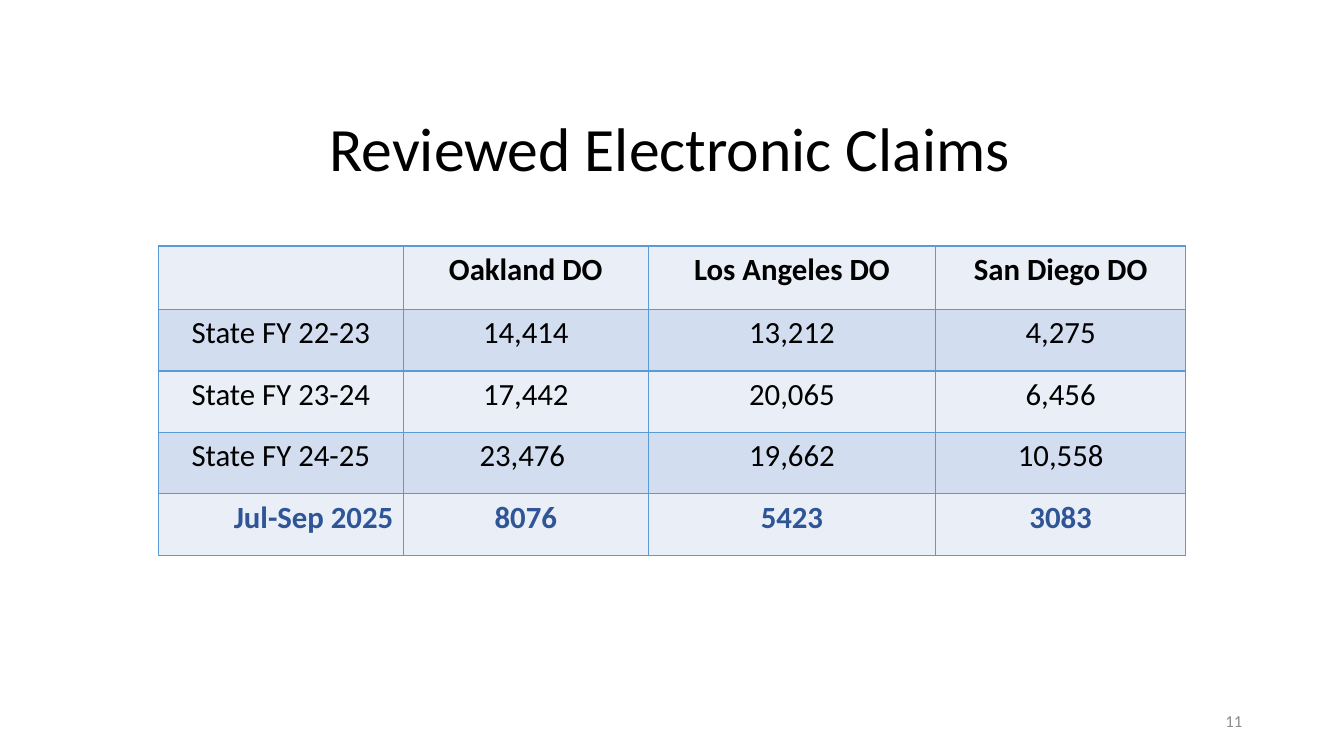
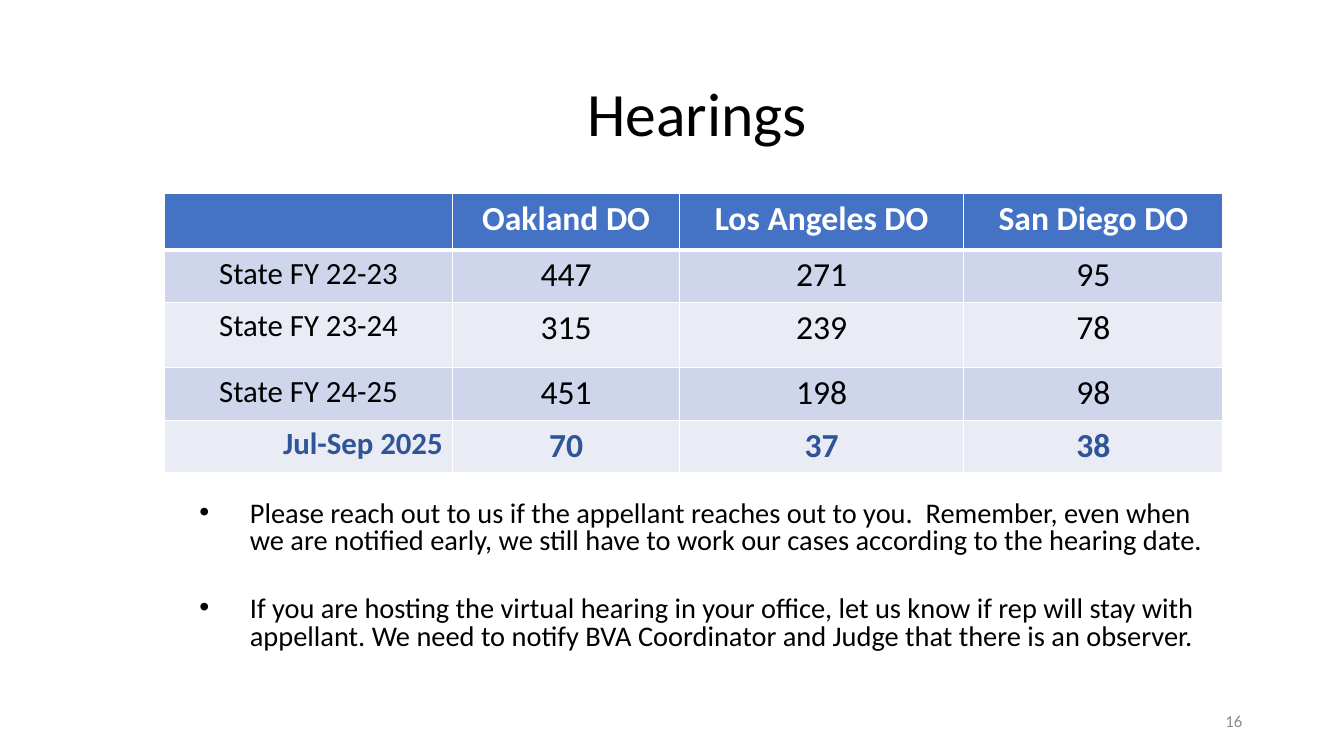
from pptx import Presentation
from pptx.dml.color import RGBColor
from pptx.enum.text import MSO_ANCHOR, MSO_AUTO_SIZE, PP_ALIGN
from pptx.oxml import parse_xml
from pptx.oxml.ns import nsdecls
from pptx.util import Inches, Pt

FONT = "Calibri"
COLORS = {
    "text": "000000",
    "white": "FFFFFF",
    "number": "8C8C8C",
    "current": "2F5597",
    "header": "4472C4",
    "border": "5B9BD5",
    "sky_light": "EAEFF7",
    "sky_dark": "D2DEEF",
    "blue_light": "E9EBF5",
    "blue_dark": "CFD5EA",
}
OFFICES = ["", "Oakland DO", "Los Angeles DO", "San Diego DO"]
PERIODS = ["State FY 22-23", "State FY 23-24", "State FY 24-25", "Jul-Sep 2025"]


def color(name):
    return RGBColor.from_string(COLORS[name])


class Deck:
    def __init__(self):
        self.presentation = Presentation()
        self.presentation.slide_width = Inches(13.33)
        self.presentation.slide_height = Inches(7.5)
        self.slide = None

    def format_text(self, paragraph, size, color_name="text", bold=False, align=PP_ALIGN.CENTER):
        paragraph.alignment = align
        font = paragraph.font
        font.name, font.size, font.bold = FONT, Pt(size), bold
        font.color.rgb = color(color_name)

    def add_slide(self, title, box, number):
        self.slide = self.presentation.slides.add_slide(self.presentation.slide_layouts[5])
        shape = self.slide.shapes.title
        shape.left, shape.top, shape.width, shape.height = map(Inches, box)
        frame = shape.text_frame
        frame.text = title
        frame.auto_size = MSO_AUTO_SIZE.NONE
        frame.vertical_anchor = MSO_ANCHOR.MIDDLE
        frame.paragraphs[0].line_spacing = 0.9
        self.format_text(frame.paragraphs[0], 44)

        frame = self.add_text_frame(9.42, 6.95, 3, 0.4)
        frame.vertical_anchor = MSO_ANCHOR.MIDDLE
        frame.text = number
        self.format_text(frame.paragraphs[0], 12, "number", align=PP_ALIGN.RIGHT)

    def add_text_frame(self, *box):
        frame = self.slide.shapes.add_textbox(*map(Inches, box)).text_frame
        frame.word_wrap = True
        return frame

    def set_borders(self, cell, color_name, bottom_width):
        properties = cell._tc.get_or_add_tcPr()
        for side, width in (("L", 1), ("R", 1), ("T", 1), ("B", bottom_width)):
            properties.append(parse_xml(
                f'<a:ln{side} {nsdecls("a")} w="{Pt(width)}"><a:solidFill>'
                f'<a:srgbClr val="{COLORS[color_name]}"/></a:solidFill></a:ln{side}>'))

    def add_claims_table(self, left, top, widths, heights, values, fills, header_color,
                         border, size, header_border=1):
        """Fills are the header, odd-row and even-row colours; values exclude the labels."""
        rows = [OFFICES] + [[period, *row] for period, row in zip(PERIODS, values)]
        table = self.slide.shapes.add_table(
            len(rows), len(OFFICES), Inches(left), Inches(top),
            Inches(sum(widths)), Inches(sum(heights))).table
        table.first_row = table.horz_banding = False
        for column, width in zip(table.columns, widths):
            column.width = Inches(width)
        for row, height in zip(table.rows, heights):
            row.height = Inches(height)

        header_fill, *bands = fills
        last = len(rows) - 1
        for r, row in enumerate(rows):
            text_color = header_color if r == 0 else "current" if r == last else "text"
            for c, text in enumerate(row):
                cell = table.cell(r, c)
                # Neighbouring cells share an edge, so both get the same width
                self.set_borders(cell, border, header_border if r == 0 else 1)
                cell.fill.solid()
                cell.fill.fore_color.rgb = color(bands[(r - 1) % 2] if r else header_fill)
                cell.text = text
                is_label = c == 0
                align = PP_ALIGN.RIGHT if is_label and r == last else PP_ALIGN.CENTER
                self.format_text(cell.text_frame.paragraphs[0], 22 if is_label else size,
                                 text_color, r in (0, last), align)

    def add_bullets(self, box, items, size, gap):
        frame = self.add_text_frame(*box)
        for index, item in enumerate(items):
            paragraph = frame.add_paragraph() if index else frame.paragraphs[0]
            paragraph.text = item
            properties = paragraph._p.get_or_add_pPr()
            properties.set("marL", str(Inches(0.5)))
            properties.set("indent", str(-Inches(0.5)))
            properties.append(parse_xml(f'<a:buFont {nsdecls("a")} typeface="Arial"/>'))
            properties.append(parse_xml(f'<a:buChar {nsdecls("a")} char="•"/>'))
            paragraph.line_spacing = 0.8
            if index:
                paragraph.space_before = Pt(gap)
            self.format_text(paragraph, size, align=PP_ALIGN.LEFT)


def main():
    deck = Deck()

    deck.add_slide("Reviewed Electronic Claims", (0.87, 0.78, 11.55, 1.45), "11")
    deck.add_claims_table(
        1.57, 2.44, [2.43, 2.43, 2.85, 2.48], [0.63] + [0.61] * 4,
        [["14,414", "13,212", "4,275"],
         ["17,442", "20,065", "6,456"],
         ["23,476 ", "19,662", "10,558"],
         ["8076", "5423", "3083"]],
        ["sky_light", "sky_dark", "sky_light"], "text", "border", size=22)

    deck.add_slide("Hearings", (1.41, 0.64, 11.01, 1.04), "16")
    deck.add_claims_table(
        1.63, 1.92, [2.86, 2.25, 2.82, 2.57], [0.56, 0.52, 0.65, 0.52, 0.52],
        [["447", "271", "95"],
         ["315", "239", "78"],
         ["451", "198", "98"],
         ["70", "37", "38"]],
        ["header", "blue_dark", "blue_light"], "white", "white", size=24, header_border=3)
    deck.add_bullets(
        (1.88, 4.93, 10.25, 1.67),
        ["Please reach out to us if the appellant reaches out to you.  Remember, even when "
         "we are notified early, we still have to work our cases according to the hearing date.",
         "If you are hosting the virtual hearing in your office, let us know if rep will stay with "
         "appellant. We need to notify BVA Coordinator and Judge that there is an observer."],
        size=20.3, gap=29)

    deck.presentation.save("out.pptx")


if __name__ == "__main__":
    main()
